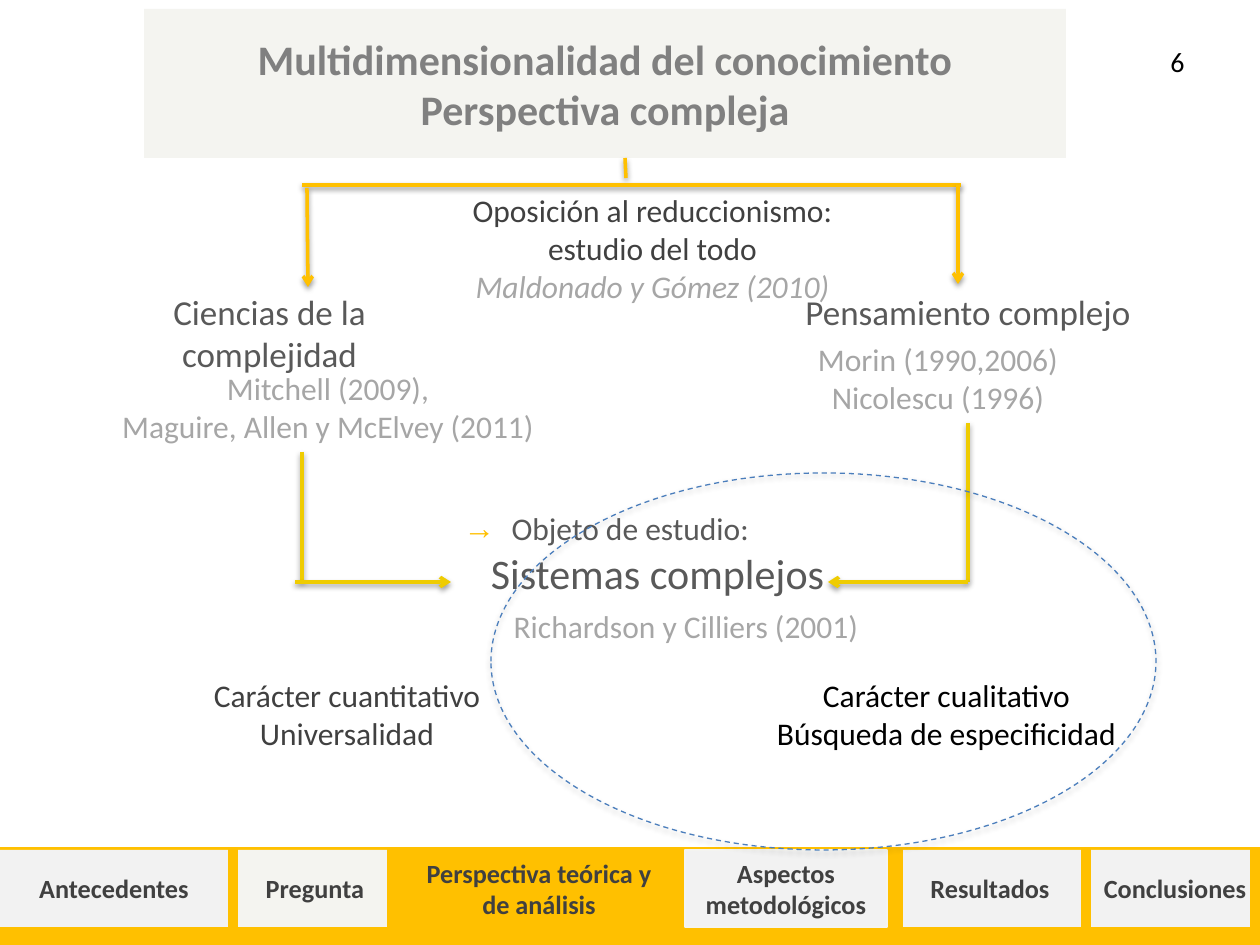
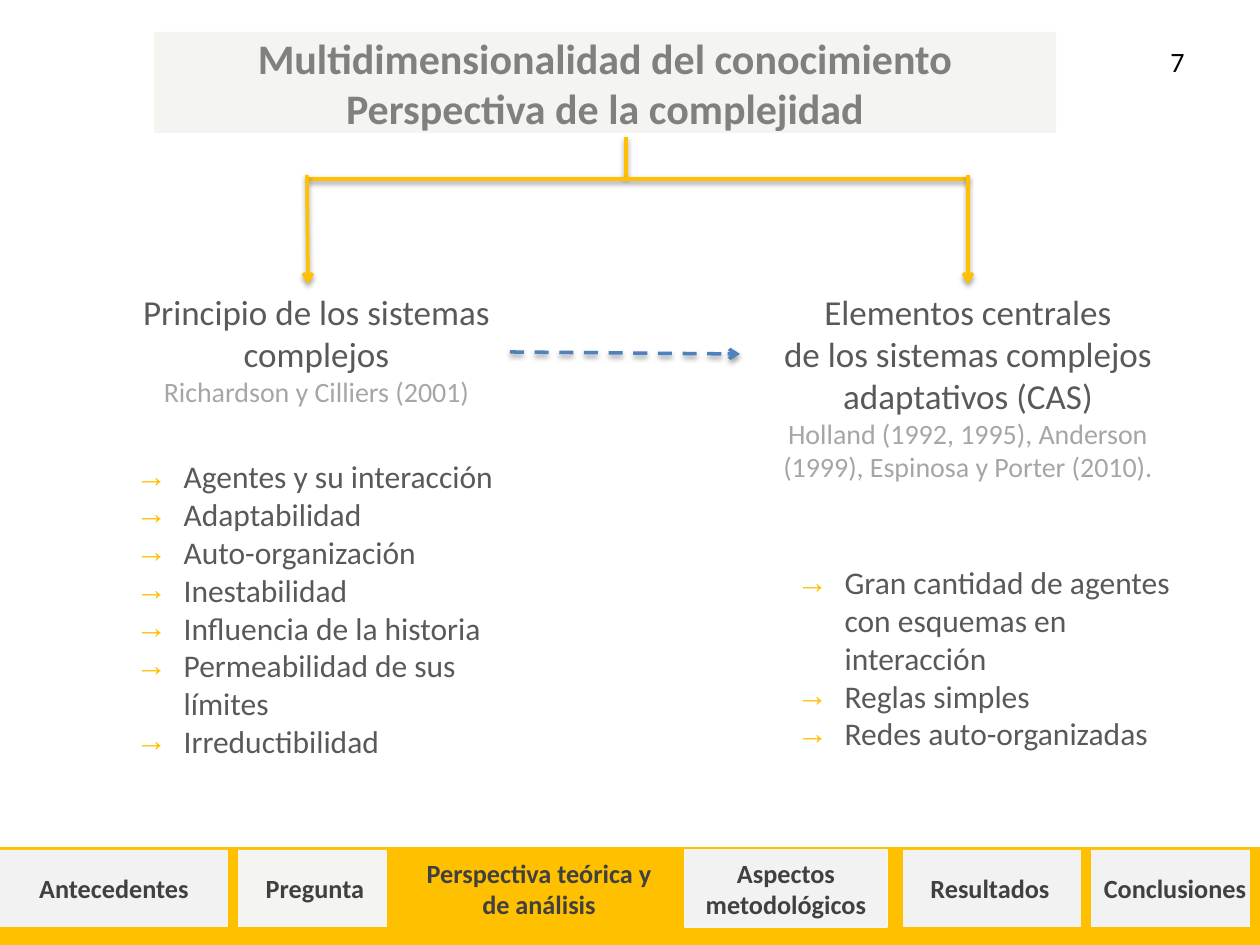
from dataclasses import dataclass
from typing import NamedTuple, Optional

from lxml.etree import SubElement
from pptx import Presentation
from pptx.dml.color import RGBColor
from pptx.enum.dml import MSO_LINE
from pptx.enum.shapes import MSO_CONNECTOR, MSO_SHAPE
from pptx.enum.text import MSO_ANCHOR, MSO_AUTO_SIZE, PP_ALIGN
from pptx.oxml.ns import qn
from pptx.util import Emu, Pt

FONT = "Calibri"
AMBER = RGBColor(0xFF, 0xC0, 0x00)
MUSTARD = RGBColor(0xEF, 0xCC, 0x01)
BLUE = RGBColor(0x4F, 0x81, 0xBD)
ELLIPSE_BLUE = RGBColor(0x4B, 0x7E, 0xBC)
IVORY = RGBColor(0xF4, 0xF4, 0xF0)
PALE = RGBColor(0xF2, 0xF2, 0xF2)
BLACK = RGBColor(0x00, 0x00, 0x00)
CHARCOAL = RGBColor(0x40, 0x40, 0x40)
SLATE = RGBColor(0x59, 0x59, 0x59)
HEADING_GRAY = RGBColor(0x80, 0x80, 0x80)
CITATION_GRAY = RGBColor(0xA6, 0xA6, 0xA6)

NAV_TOP = 849
SLIDE_WIDTH, SLIDE_HEIGHT = 1260, 945


class Box(NamedTuple):
    left: int
    top: int
    width: int
    height: int


@dataclass(frozen=True)
class Line:
    text: str
    size: int = 18
    color: RGBColor = SLATE
    bold: bool = False
    italic: bool = False
    bullet: bool = False
    align: PP_ALIGN = PP_ALIGN.CENTER


@dataclass(frozen=True)
class Block:
    box: Box
    lines: list[Line]


@dataclass(frozen=True)
class Tab:
    label: str
    left: int
    width: int
    fill: RGBColor = PALE
    outline: Optional[RGBColor] = None


@dataclass(frozen=True)
class Link:
    x1: int
    y1: int
    x2: int
    y2: int
    color: RGBColor = AMBER
    arrow: bool = False
    dashed: bool = False
    width: float = 2
    shadow: bool = True


TABS = [
    Tab("Antecedentes", 0, 228),
    Tab("Pregunta", 238, 154, IVORY),
    Tab("Perspectiva teórica y\nde análisis", 398, 282, AMBER, AMBER),
    Tab("Aspectos\nmetodológicos", 685, 202, PALE, IVORY),
    Tab("Resultados", 898, 184),
    Tab("Conclusiones", 1090, 170),
]
SEPARATORS = [233, 392, 679, 898, 1086, 1255]


def px(length: int) -> Emu:
    return Emu(round(length * 914400 / 126))


def place(shape, box: Box) -> None:
    shape.left, shape.top, shape.width, shape.height = map(px, box)


def write(frame, lines: list[Line], anchor=MSO_ANCHOR.TOP) -> None:
    frame.word_wrap = True
    frame.auto_size = MSO_AUTO_SIZE.NONE
    frame.vertical_anchor = anchor
    for index, line in enumerate(lines):
        paragraph = frame.add_paragraph() if index else frame.paragraphs[0]
        paragraph.alignment = line.align
        paragraph.space_before = Pt(0)
        set_bullet(paragraph, line.bullet)
        for part_index, part in enumerate(line.text.split("\n")):
            if part_index:
                paragraph.add_line_break()
            run = paragraph.add_run()
            run.text = part
            run.font.name = FONT
            run.font.size = Pt(line.size)
            run.font.bold = line.bold
            run.font.italic = line.italic
            run.font.color.rgb = line.color


def set_bullet(paragraph, bullet: bool) -> None:
    properties = paragraph._p.get_or_add_pPr()
    indent = px(48) if bullet else 0
    properties.set("marL", str(indent))
    properties.set("indent", str(-indent))
    if bullet:
        color = SubElement(properties, qn("a:buClr"))
        SubElement(color, qn("a:srgbClr"), val=str(AMBER))
        SubElement(properties, qn("a:buChar"), char="→")
    else:
        SubElement(properties, qn("a:buNone"))


def add_shadow(properties, opacity: int) -> None:
    effects = SubElement(properties, qn("a:effectLst"))
    shadow = SubElement(effects, qn("a:outerShdw"), blurRad=str(Pt(3.1)),
                        dist=str(Pt(1.6)), dir="5400000", rotWithShape="0")
    color = SubElement(shadow, qn("a:srgbClr"), val=str(BLACK))
    SubElement(color, qn("a:alpha"), val=str(opacity * 1000))


def add_text(slide, block: Block):
    text_box = slide.shapes.add_textbox(*map(px, block.box))
    write(text_box.text_frame, block.lines)
    return text_box


def add_link(slide, link: Link):
    connector = slide.shapes.add_connector(
        MSO_CONNECTOR.STRAIGHT, *map(px, (link.x1, link.y1, link.x2, link.y2)))
    connector.line.color.rgb = link.color
    connector.line.width = Pt(link.width)
    if link.dashed:
        connector.line.dash_style = MSO_LINE.DASH
    if link.arrow:
        SubElement(connector.line._get_or_add_ln(), qn("a:tailEnd"), type="arrow")
    properties = connector._element.spPr
    if link.shadow:
        add_shadow(properties, 38)
    else:
        SubElement(properties, qn("a:effectLst"))
    return connector


def add_rectangle(slide, box: Box, fill: RGBColor, outline: Optional[RGBColor], width: float):
    rectangle = slide.shapes.add_shape(MSO_SHAPE.RECTANGLE, *map(px, box))
    rectangle.shadow.inherit = False
    rectangle.fill.solid()
    rectangle.fill.fore_color.rgb = fill
    if outline is None:
        rectangle.line.fill.background()
    else:
        rectangle.line.color.rgb = outline
        rectangle.line.width = Pt(width)
    return rectangle


def add_heading(slide, heading: str, box: Box) -> None:
    title = slide.shapes.title
    place(title, box)
    properties = title._element.spPr
    properties.find(qn("a:xfrm")).set("flipH", "1")
    geometry = SubElement(properties, qn("a:prstGeom"), prst="round1Rect")
    SubElement(geometry, qn("a:avLst"))
    title.fill.solid()
    title.fill.fore_color.rgb = IVORY
    write(title.text_frame, [Line(heading, 24, HEADING_GRAY, bold=True)], MSO_ANCHOR.MIDDLE)


def add_navigation(slide) -> None:
    add_rectangle(slide, Box(0, NAV_TOP, SLIDE_WIDTH, 95), AMBER, AMBER, 2)
    for tab in TABS:
        box = Box(tab.left, NAV_TOP + 1, tab.width, 77)
        frame = add_rectangle(slide, box, tab.fill, tab.outline, 0.75).text_frame
        frame.margin_left = frame.margin_right = 0
        write(frame, [Line(tab.label, 15, CHARCOAL, bold=True)], MSO_ANCHOR.MIDDLE)
    for x in SEPARATORS:
        add_link(slide, Link(x, NAV_TOP, x, SLIDE_HEIGHT, width=6, shadow=False))


def start_slide(deck, layout: int, number: int, heading: str, heading_box: Box,
                lists: list[Block]):
    slide = deck.slides.add_slide(deck.slide_layouts[layout])
    add_heading(slide, heading, heading_box)
    for index, block in enumerate(lists, start=1):
        body = slide.placeholders[index]
        place(body, block.box)
        write(body.text_frame, block.lines)
    page_number = Line(str(number), 16, BLACK, align=PP_ALIGN.RIGHT)
    add_text(slide, Block(Box(1097, 38, 100, 46), [page_number]))
    add_navigation(slide)
    return slide


def bullets(*items: str) -> list[Line]:
    return [Line(item, bullet=True, align=PP_ALIGN.LEFT) for item in items]


def citations(*items: str, size: int = 18) -> list[Line]:
    return [Line(item, size, CITATION_GRAY) for item in items]


def build_perspective(deck) -> None:
    study_object = Block(Box(451, 503, 413, 102),
                         bullets("Objeto de estudio:") + [Line("Sistemas complejos", 24)])
    slide = start_slide(deck, 1, 6,
                        "Multidimensionalidad del conocimiento\nPerspectiva compleja",
                        Box(144, 9, 922, 149), [study_object])
    blocks = [
        Block(Box(123, 284, 293, 97), [Line("Ciencias de la complejidad", 20)]),
        Block(Box(745, 284, 446, 93), [Line("Pensamiento complejo", 20)]),
        Block(Box(84, 670, 526, 90), [Line("Carácter cuantitativo", color=CHARCOAL),
                                      Line("Universalidad", color=CHARCOAL)]),
        Block(Box(689, 670, 515, 165), [Line("Carácter cualitativo", color=BLACK),
                                        Line("Búsqueda de especificidad", color=BLACK)]),
        Block(Box(650, 334, 576, 90), citations("Morin (1990,2006)", "Nicolescu (1996)")),
        Block(Box(35, 363, 586, 90),
              citations("Mitchell (2009),", "Maguire, Allen y McElvey (2011)")),
        Block(Box(417, 185, 471, 170),
              [Line("Oposición al reduccionismo: estudio del todo", color=CHARCOAL),
               Line("Maldonado y Gómez (2010)", color=CITATION_GRAY, italic=True)]),
        Block(Box(398, 601, 576, 50), citations("Richardson y Cilliers (2001)")),
    ]
    for block in blocks:
        add_text(slide, block)
    links = [
        Link(625, 158, 626, 178),
        Link(302, 185, 961, 185),
        Link(307, 188, 308, 287, arrow=True),
        Link(958, 185, 958, 284, arrow=True),
        Link(302, 452, 302, 582, MUSTARD),
        Link(968, 423, 968, 582, MUSTARD),
        Link(295, 582, 451, 582, MUSTARD, arrow=True),
        Link(968, 582, 828, 582, MUSTARD, arrow=True),
    ]
    for link in links:
        add_link(slide, link)
    qualitative_scope = slide.shapes.add_shape(MSO_SHAPE.OVAL, *map(px, Box(491, 473, 665, 377)))
    qualitative_scope.fill.background()
    qualitative_scope.line.color.rgb = ELLIPSE_BLUE
    qualitative_scope.line.width = Pt(0.75)
    qualitative_scope.line.dash_style = MSO_LINE.DASH
    add_shadow(qualitative_scope._element.spPr, 35)


def build_complexity(deck) -> None:
    principles = Block(Box(123, 451, 387, 318), bullets(
        "Agentes y su interacción", "Adaptabilidad", "Auto-organización", "Inestabilidad",
        "Influencia de la historia", "Permeabilidad de sus límites", "Irreductibilidad"))
    elements = Block(Box(784, 557, 427, 204), bullets(
        "Gran cantidad de agentes con esquemas en interacción", "Reglas simples",
        "Redes auto-organizadas"))
    slide = start_slide(deck, 3, 7,
                        "Multidimensionalidad del conocimiento\nPerspectiva de la complejidad",
                        Box(154, 32, 902, 101), [principles, elements])
    principle_heading = add_text(slide, Block(
        Box(123, 284, 387, 136),
        [Line("Principio de los sistemas complejos", 20)]
        + citations("Richardson y Cilliers (2001)", size=16)))
    element_heading = add_text(slide, Block(
        Box(745, 284, 446, 246),
        [Line("Elementos centrales", 20),
         Line("de los sistemas complejos adaptativos (CAS)", 20)]
        + citations("Holland (1992, 1995), Anderson (1999), Espinosa y Porter (2010).", size=16)))
    add_link(slide, Link(626, 137, 626, 178))
    add_link(slide, Link(308, 179, 968, 179))
    add_link(slide, Link(307, 175, 308, 284, arrow=True))
    to_elements = add_link(slide, Link(968, 175, 968, 284, arrow=True))
    to_elements.end_connect(element_heading, 0)
    across = add_link(slide, Link(510, 352, 740, 354, BLUE, arrow=True, dashed=True))
    across.begin_connect(principle_heading, 3)


def main() -> None:
    deck = Presentation()
    deck.slide_width, deck.slide_height = px(SLIDE_WIDTH), px(SLIDE_HEIGHT)
    build_perspective(deck)
    build_complexity(deck)
    deck.save("out.pptx")


if __name__ == "__main__":
    main()
